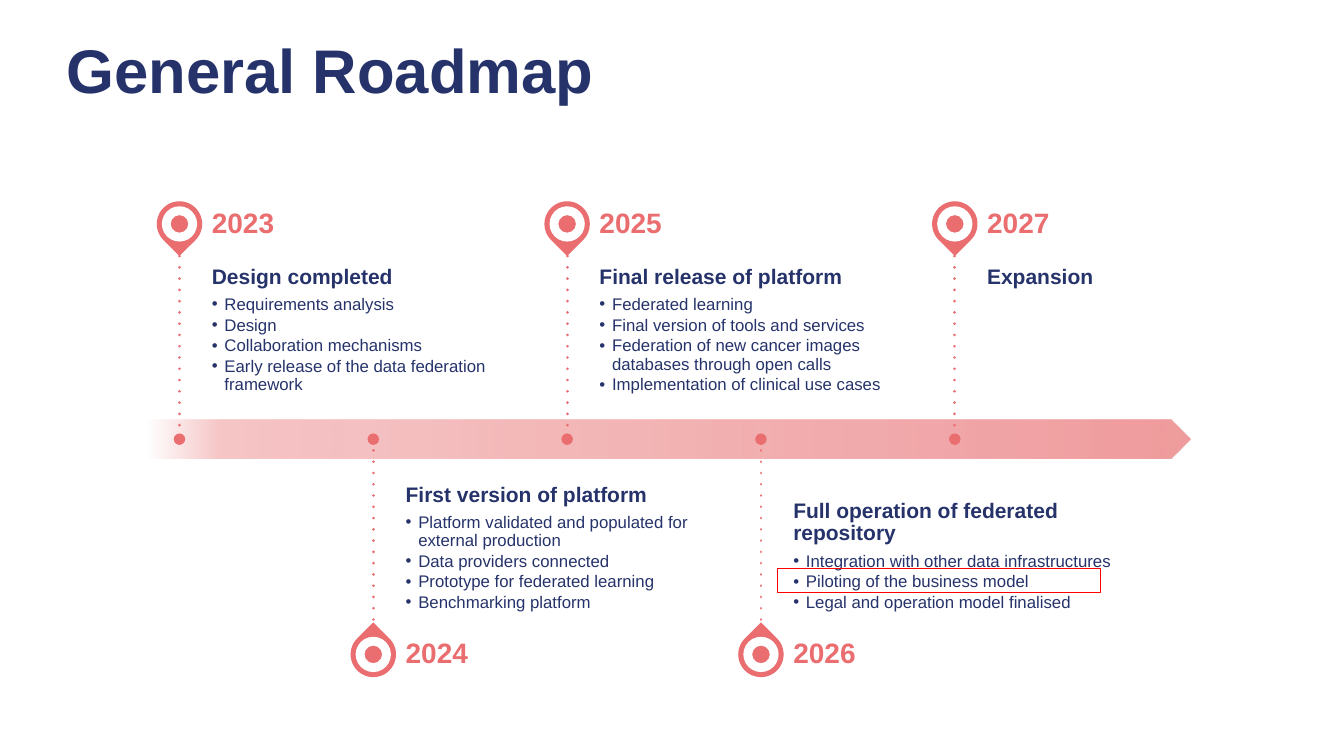
from dataclasses import dataclass

from lxml import etree
from pptx import Presentation
from pptx.dml.color import RGBColor
from pptx.enum import shapes, text
from pptx.oxml import ns
from pptx.util import Pt


@dataclass(frozen=True)
class Theme:
    font: str = "Arial"
    navy: str = "26336B"
    coral: str = "EA6D70"
    white: str = "FFFFFF"
    highlight: str = "FF0000"
    arrow_stops: tuple = ((0, "ED8A8C", 0), (7, "ED8A8C", 49), (100, "EB7B7D", 75))
    title: float = 44
    year: float = 20
    heading: float = 15
    item: float = 12


@dataclass(frozen=True)
class Milestone:
    year: str
    heading: str
    items: tuple[str, ...] = ()


THEME = Theme()
MILESTONES = (
    Milestone("2023", "Design completed", (
        "Requirements analysis", "Design", "Collaboration mechanisms",
        "Early release of the data federation framework")),
    Milestone("2024", "First version of platform", (
        "Platform validated and populated for external production",
        "Data providers connected", "Prototype for federated learning",
        "Benchmarking platform")),
    Milestone("2025", "Final release of platform", (
        "Federated learning", "Final version of tools and services",
        "Federation of new cancer images databases through open calls",
        "Implementation of clinical use cases")),
    Milestone("2026", "Full operation of federated repository", (
        "Integration with other data infrastructures",
        "Piloting of the business model", "Legal and operation model finalised")),
    Milestone("2027", "Expansion"),
)

# Timeline geometry in points; vertical distances are measured from the axis
FIRST_X, STEP_X, AXIS_Y = 128.2, 138.45, 313.7
STEM, PIN_OFFSET = 130.8, 153.75
PIN, RING, DOT = 32.4, 25.2, 8.2
TEXT_GAP, TEXT_WIDTH, YEAR_HEIGHT = 23.1, 231, 46
NEAR_AXIS, FAR_FROM_AXIS = 11.5, 7.2
BULLET_INDENT = 9


def add_sub(parent, tag: str, **attributes: str):
    return etree.SubElement(parent, ns.qn(tag), attributes)


def place(sp, left: float, top: float, width: float, height: float) -> None:
    sp.left, sp.top, sp.width, sp.height = map(Pt, (left, top, width, height))


def set_frame(sp, anchor, left: float = 0, top: float = 0, right: float = 0,
              bottom: float = 0):
    tf = sp.text_frame
    tf.word_wrap = True
    tf.auto_size = text.MSO_AUTO_SIZE.NONE
    tf.vertical_anchor = anchor
    tf.margin_left, tf.margin_top = Pt(left), Pt(top)
    tf.margin_right, tf.margin_bottom = Pt(right), Pt(bottom)
    return tf


def write(p, words: str, *, size: float, color: str = THEME.navy, bold: bool = True,
          before: float = 0, bullet: bool = False) -> None:
    pPr = p._p.get_or_add_pPr()
    indent = Pt(BULLET_INDENT) if bullet else 0
    pPr.set("marL", str(indent))
    pPr.set("indent", str(-indent))
    if bullet:
        add_sub(add_sub(pPr, "a:buClr"), "a:srgbClr", val=color)
        add_sub(pPr, "a:buFont", typeface=THEME.font)
        add_sub(pPr, "a:buChar", char="•")
    else:
        add_sub(pPr, "a:buNone")
    p.alignment = text.PP_ALIGN.LEFT
    p.line_spacing = 0.9
    p.space_before, p.space_after = Pt(before), Pt(0)
    r = p.add_run()
    r.text = words
    r.font.name, r.font.size, r.font.bold = THEME.font, Pt(size), bold
    r.font.color.rgb = RGBColor.from_string(color)


def add_filled(slide, kind, left: float, top: float, width: float, height: float,
               color: str | None = None):
    """Add a preset shape without line or shadow; no colour means no fill."""
    sp = slide.shapes.add_shape(kind, *map(Pt, (left, top, width, height)))
    sp.shadow.inherit = False
    sp.line.fill.background()
    if color:
        sp.fill.solid()
        sp.fill.fore_color.rgb = RGBColor.from_string(color)
    else:
        sp.fill.background()
    return sp


def add_centred(slide, kind, x: float, y: float, size: float, color: str):
    return add_filled(slide, kind, x - size / 2, y - size / 2, size, size, color)


def add_axis_arrow(slide) -> None:
    height = 28.4
    sp = add_filled(slide, shapes.MSO_SHAPE.PENTAGON, 105.4, AXIS_Y - height / 2,
                    745.2, height)
    sp.adjustments[0] = 0.5
    sp.fill.gradient()
    sp.fill.gradient_angle = 0
    stops = sp._element.spPr.find(".//" + ns.qn("a:gsLst"))
    for stop in list(stops):
        stops.remove(stop)
    for position, color, alpha in THEME.arrow_stops:
        stop = add_sub(stops, "a:gs", pos=str(position * 1000))
        clr = add_sub(stop, "a:srgbClr", val=color)
        add_sub(clr, "a:alpha", val=str(alpha * 1000))


def add_stem(slide, x: float, side: int) -> None:
    ends = sorted((AXIS_Y, AXIS_Y + side * STEM))
    line = slide.shapes.add_connector(
        shapes.MSO_CONNECTOR.STRAIGHT, Pt(x), Pt(ends[0]), Pt(x), Pt(ends[1]))
    line.line.width = Pt(2)
    line.line.color.rgb = RGBColor.from_string(THEME.coral)
    ln = line.line._get_or_add_ln()
    ln.set("cap", "rnd")
    add_sub(ln, "a:prstDash", val="dot")
    add_sub(line._element.spPr, "a:effectLst")


def add_milestone(slide, milestone: Milestone, x: float, side: int, slots) -> None:
    """Draw a milestone above (side -1) or below (side 1) the axis."""
    above = side < 0
    pin_y = AXIS_Y + side * PIN_OFFSET
    pin = add_centred(slide, shapes.MSO_SHAPE.TEAR, x, pin_y, PIN, THEME.coral)
    pin.rotation = 135 if above else 315
    add_centred(slide, shapes.MSO_SHAPE.DONUT, x, pin_y, RING, THEME.white)

    left = x + TEXT_GAP
    box = next(slots) if milestone.items else slide.shapes.add_textbox(0, 0, 0, 0)
    place(box, left, AXIS_Y - STEM if above else AXIS_Y, TEXT_WIDTH, STEM)
    if above:
        tf = set_frame(box, text.MSO_ANCHOR.TOP, top=FAR_FROM_AXIS,
                       right=7.2, bottom=NEAR_AXIS)
    else:
        tf = set_frame(box, text.MSO_ANCHOR.BOTTOM, top=NEAR_AXIS,
                       bottom=FAR_FROM_AXIS)
    write(tf.paragraphs[0], milestone.heading, size=THEME.heading)
    for i, item in enumerate(milestone.items):
        write(tf.add_paragraph(), item, size=THEME.item, bold=False,
              before=1.8 if i else 5.2, bullet=True)

    year = slide.shapes.add_textbox(0, 0, 0, 0)
    place(year, left, pin_y - YEAR_HEIGHT / 2, TEXT_WIDTH, YEAR_HEIGHT)
    tf = set_frame(year, text.MSO_ANCHOR.MIDDLE, right=10)
    write(tf.paragraphs[0], milestone.year, size=THEME.year, color=THEME.coral)

    add_stem(slide, x, side)
    add_centred(slide, shapes.MSO_SHAPE.OVAL, x, AXIS_Y, DOT, THEME.coral)


def main() -> None:
    prs = Presentation()
    prs.slide_width, prs.slide_height = Pt(960), Pt(540)
    slide = prs.slides.add_slide(prs.slide_layouts.get_by_name("Comparison"))

    title = slide.shapes.title
    place(title, 40.3, 0, 662.4, 104.4)
    tf = set_frame(title, text.MSO_ANCHOR.MIDDLE, 7.2, 3.6, 7.2, 3.6)
    write(tf.paragraphs[0], "General Roadmap", size=THEME.title)

    bodies = [ph for ph in slide.placeholders if ph.placeholder_format.idx in range(1, 5)]
    slots = iter(bodies)
    add_axis_arrow(slide)
    for i, milestone in enumerate(MILESTONES):
        add_milestone(slide, milestone, FIRST_X + i * STEP_X, 1 if i % 2 else -1, slots)

    highlight = add_filled(slide, shapes.MSO_SHAPE.RECTANGLE, 555.3, 406.2, 231, 17)
    highlight.line.color.rgb = RGBColor.from_string(THEME.highlight)
    highlight.line.width = Pt(1)
    prs.save("out.pptx")


if __name__ == "__main__":
    main()
